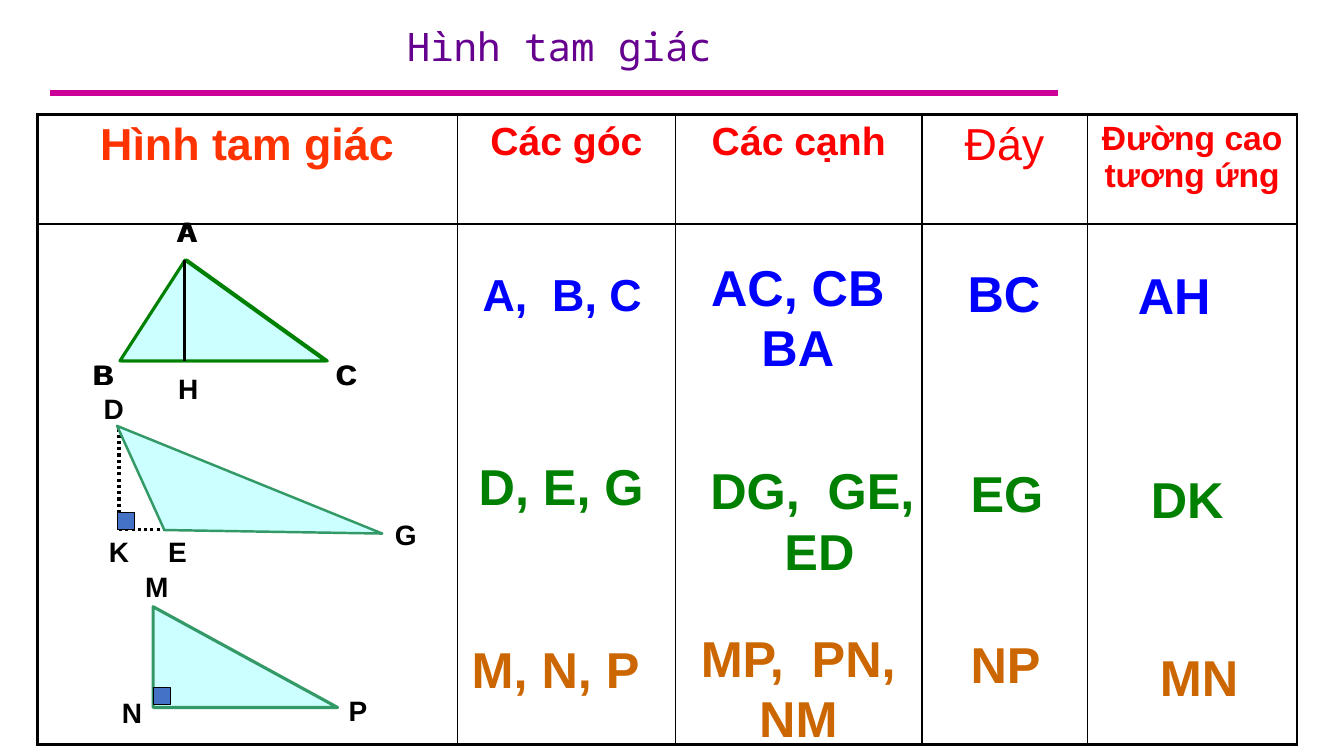
"""Build the slide that lists angles, sides, bases and heights of three triangles."""
from lxml.etree import SubElement
from pptx import Presentation
from pptx.dml.color import RGBColor
from pptx.enum.dml import MSO_LINE
from pptx.enum.shapes import MSO_CONNECTOR, MSO_SHAPE
from pptx.enum.text import PP_ALIGN
from pptx.oxml.ns import qn
from pptx.util import Pt

THEME = {
    "font": "Arial", "title_font": "Noto Sans Mono",
    "title": "66008F", "rule": "CC0099", "ink": "000000",
    "first_header": "FF3300", "header": "FF0000",
    "abc": "0000FF", "deg": "008000", "mnp": "CC6600",
    "inside": "CCFFFF", "abc_edge": "008000", "edge": "339966", "square": "4472C4",
    "title_size": 28, "label_size": 20, "answer_size": 36, "small_answer": 32,
}

TITLE = ("Hình tam giác", (252.7, 12.2, 293.8, 54))
HEADERS = [
    ("Hình tam giác", 32, True, "first_header"),
    ("Các góc", 28, True, "header"),
    ("Các cạnh", 28, True, "header"),
    ("Đáy", 32, False, "header"),
    ("Đường cao tương ứng", 24, True, "header"),
]
TABLE_CORNER = (26.6, 82)
COLUMN_WIDTHS = [300, 156, 176, 118, 150]
ROW_HEIGHTS = [78, 372]
OUTER_BORDER, INNER_BORDER = 2.25, 1

ANSWERS = {
    "abc": [("A,  B, C", 337.7, 187.2, 139), ("AC, CB BA", 491.8, 179.3, 156.2),
            ("BC", 684, 183.6, 90), ("AH", 805.7, 185, 90.7)],
    "deg": [("D, E, G", 334.8, 321.8, 154.8), ("DG,  GE,  ED", 495.4, 324.7, 169.9),
            ("EG", 686.2, 326.2, 90.7), ("DK", 815, 330.5, 90.7)],
    "mnp": [("M, N, P", 329.8, 452.2, 169.2), ("MP,  PN, NM", 475.2, 444.2, 190.1),
            ("NP", 686.2, 448.6, 88.6), ("MN", 821.5, 457.9, 90.7)],
}
SIDES_COLUMN = 1

TRIANGLES = {
    "mnp": ((109.4, 433.4, 131.8, 72), 0, 0, "edge", 2.25),
    "deg": ((65.5, 340.6, 204.5, 56.2), 0.71, 202.1, "edge", 1.75),
    "abc": ((85.7, 185.8, 146.9, 72), 0.317, 0, "abc_edge", 2.25),
}
VERTICES = {
    "mnp": [("M", 96.5, 403.2), ("N", 79.9, 493.2), ("P", 241.9, 491.8)],
    "deg": [("K", 70.6, 378), ("E", 113, 378), ("G", 275, 365.8), ("D", 67, 275.8)],
    "abc": [("B", 59, 252), ("C", 232.6, 252), ("A", 118.8, 149.8)],
}
FOOT = ("H", 120.2, 262.1)
RIGHT_ANGLES = {"mnp": (109.4, 491), "deg": (84.2, 365.8)}
ABC_SHIFTS = [1.2, 0]
DOTTED = [(85, 306, 85, 378), (85, 378, 120.2, 378)]
HEIGHT_AH = (131.8, 185.8, 131.8, 257.8)
RULE = (36, 66.4, 756, 66.4)
LABEL_BOX, SQUARE_SIDE = (49, 31), 12.2


def color(key):
    return RGBColor.from_string(THEME[key])


def apply(target, values):
    for name, value in values.items():
        setattr(target, name, value)


def write(frame, text, size, ink, bold=True, align=PP_ALIGN.LEFT, font="font"):
    paragraph = frame.paragraphs[0]
    paragraph.alignment = align
    run = paragraph.add_run()
    run.text = text
    apply(run.font, {"name": THEME[font], "size": Pt(size), "bold": bold})
    run.font.color.rgb = color(ink)


def add_text(slide, box, text, size, ink, wrap=True, **style):
    frame = slide.shapes.add_textbox(*map(Pt, box)).text_frame
    frame.word_wrap = wrap
    write(frame, text, size, ink, **style)


def add_label(slide, text, left, top):
    add_text(slide, (left, top, *LABEL_BOX), text, THEME["label_size"], "ink")


def add_line(slide, ends, ink, width, dash=None):
    line = slide.shapes.add_connector(MSO_CONNECTOR.STRAIGHT, *map(Pt, ends))
    line.line.color.rgb = color(ink)
    apply(line.line, {"width": Pt(width), "dash_style": dash})
    SubElement(line._element.spPr, qn("a:effectLst"))


def add_figure(slide, kind, box, fill, edge, width):
    figure = slide.shapes.add_shape(kind, *map(Pt, box))
    figure.shadow.inherit = False
    figure.fill.solid()
    figure.fill.fore_color.rgb = color(fill)
    figure.line.color.rgb = color(edge)
    figure.line.width = Pt(width)
    return figure


def add_triangle(slide, name, shift=0):
    (left, top, width, height), apex, angle, edge, weight = TRIANGLES[name]
    box = (left + shift, top, width, height)
    triangle = add_figure(slide, MSO_SHAPE.ISOSCELES_TRIANGLE, box, "inside", edge, weight)
    triangle.adjustments[0] = apex
    triangle.rotation = angle
    for text, x, y in VERTICES[name]:
        add_label(slide, text, x + shift, y)


def add_square(slide, name):
    box = (*RIGHT_ANGLES[name], SQUARE_SIDE, SQUARE_SIDE)
    add_figure(slide, MSO_SHAPE.RECTANGLE, box, "square", "ink", 0.75)


def add_borders(cell, row, column):
    last_row, last_column = len(ROW_HEIGHTS) - 1, len(COLUMN_WIDTHS) - 1
    outer = {"lnL": column == 0, "lnR": column == last_column,
             "lnT": row == 0, "lnB": row == last_row}
    for tag, is_outer in outer.items():
        width = Pt(OUTER_BORDER if is_outer else INNER_BORDER)
        border = SubElement(cell._tc.get_or_add_tcPr(), qn("a:" + tag), w=str(width))
        SubElement(SubElement(border, qn("a:solidFill")), qn("a:srgbClr"), val=THEME["ink"])


def add_grid(slide):
    size = (sum(COLUMN_WIDTHS), sum(ROW_HEIGHTS))
    grid = slide.shapes.add_table(len(ROW_HEIGHTS), len(COLUMN_WIDTHS),
                                  *map(Pt, TABLE_CORNER + size)).table
    apply(grid, {"first_row": False, "horz_banding": False})
    for row, height in enumerate(ROW_HEIGHTS):
        grid.rows[row].height = Pt(height)
        for column, width in enumerate(COLUMN_WIDTHS):
            grid.columns[column].width = Pt(width)
            cell = grid.cell(row, column)
            add_borders(cell, row, column)
            cell.fill.background()
    for column, (text, size, bold, ink) in enumerate(HEADERS):
        write(grid.cell(0, column).text_frame, text, size, ink, bold, PP_ALIGN.CENTER)


def add_answers(slide):
    for name, answers in ANSWERS.items():
        for column, (text, left, top, width) in enumerate(answers):
            is_sides = column == SIDES_COLUMN
            is_small = name == "abc" and column == 0
            add_text(slide, (left, top, width, 94.3 if is_sides else 51), text,
                     THEME["small_answer" if is_small else "answer_size"], name,
                     align=PP_ALIGN.CENTER if is_sides else PP_ALIGN.LEFT)


def main():
    deck = Presentation()
    apply(deck, {"slide_width": Pt(960), "slide_height": Pt(540)})
    slide = deck.slides.add_slide(deck.slide_layouts[6])
    text, box = TITLE
    add_text(slide, box, text, THEME["title_size"], "title", wrap=False,
             bold=False, align=PP_ALIGN.CENTER, font="title_font")
    add_line(slide, RULE, "rule", 4.5)
    add_grid(slide)
    add_triangle(slide, "mnp")
    add_square(slide, "mnp")
    for ends in DOTTED:
        add_line(slide, ends, "ink", 2.25, MSO_LINE.ROUND_DOT)
    add_triangle(slide, "deg")
    add_square(slide, "deg")
    for shift in ABC_SHIFTS:
        add_triangle(slide, "abc", shift)
    add_line(slide, HEIGHT_AH, "ink", 1.75)
    add_label(slide, *FOOT)
    add_answers(slide)
    deck.save("out.pptx")


if __name__ == "__main__":
    main()
